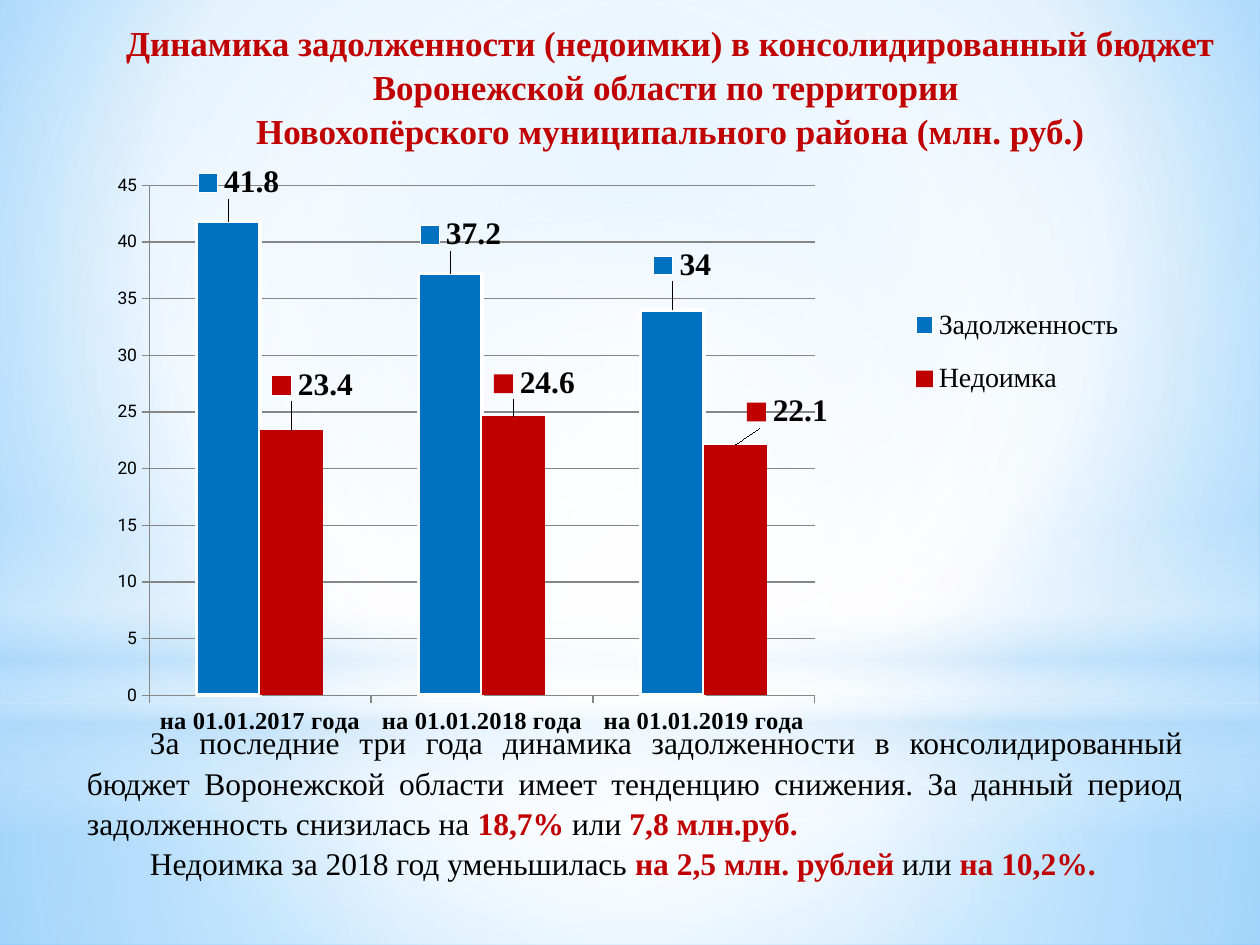
from dataclasses import dataclass

from pptx import Presentation
from pptx.chart.data import CategoryChartData
from pptx.dml.color import RGBColor
from pptx.enum.chart import XL_CHART_TYPE, XL_LABEL_POSITION, XL_LEGEND_POSITION, XL_TICK_MARK
from pptx.enum.shapes import MSO_SHAPE
from pptx.enum.text import MSO_ANCHOR, MSO_AUTO_SIZE, PP_ALIGN
from pptx.oxml import parse_xml
from pptx.oxml.ns import nsdecls, qn
from pptx.util import Inches, Pt


@dataclass(frozen=True)
class Theme:
    serif: str = "Times New Roman"
    sans: str = "Roboto"
    red: str = "C00000"
    blue: str = "0070C0"
    black: str = "000000"
    white: str = "FFFFFF"
    sky: str = "B4DCFA"
    grid: str = "868686"
    title_size: int = 20
    body_size: int = 18
    legend_size: int = 16
    category_size: int = 14
    axis_size: int = 10


theme = Theme()


def add_run(paragraph, text, *, size=theme.body_size, color=theme.black, bold=False):
    run = paragraph.add_run()
    run.text = text
    run.font.name = theme.serif
    run.font.size = Pt(size)
    run.font.bold = bold
    run.font.color.rgb = RGBColor.from_string(color)


def set_gradient(fill, element, stops, center=None):
    """Fill with (position, colour, opacity) stops: radial around center, else downwards."""
    fill.solid()
    stop_xml = "".join(
        f'<a:gs pos="{position * 1000}"><a:srgbClr val="{color}">'
        f'<a:alpha val="{opacity * 1000}"/></a:srgbClr></a:gs>'
        for position, color, opacity in stops
    )
    if center:
        sides = " ".join(f'{side}="{value * 1000}"' for side, value in zip("ltrb", center))
        direction = f'<a:path path="circle"><a:fillToRect {sides}/></a:path>'
    else:
        direction = '<a:lin ang="5400000" scaled="0"/>'
    solid = element.find(".//" + qn("a:solidFill"))
    solid.getparent().replace(solid, parse_xml(
        f'<a:gradFill {nsdecls("a")} rotWithShape="1"><a:gsLst>{stop_xml}</a:gsLst>{direction}</a:gradFill>'
    ))


presentation = Presentation()
presentation.slide_width = Inches(10)
presentation.slide_height = Inches(7.5)
slide = presentation.slides.add_slide(presentation.slide_layouts[1])
title, body = slide.placeholders

# Background glow
set_gradient(slide.background.fill, slide.element,
             [(0, "9ED5FF", 100), (60, theme.white, 100), (100, "5BB9FF", 100)], (20, 10, 20, 60))
middle = (50, 50, 50, 50)
glows = [
    (MSO_SHAPE.RECTANGLE, 5.58, 1.92, middle,
     [(0, theme.white, 91), (37, theme.white, 76), (100, theme.sky, 79)]),
    (MSO_SHAPE.RECTANGLE, 0, 5.58, middle,
     [(0, theme.white, 89), (48, theme.white, 62), (100, theme.sky, 79)]),
    (MSO_SHAPE.RECTANGLE, 4.12, 2.5, None,
     [(0, theme.white, 0), (29, theme.white, 30), (45, theme.sky, 40),
      (55, theme.white, 26), (65, theme.sky, 60), (100, theme.white, 0)]),
    (MSO_SHAPE.OVAL, 1.75, 5.58, middle, [(0, theme.white, 100), (56, theme.white, 0)]),
]
for kind, top, height, center, stops in glows:
    shape = slide.shapes.add_shape(kind, 0, Inches(top), Inches(10), Inches(height))
    shape.shadow.inherit = False
    shape.line.fill.background()
    set_gradient(shape.fill, shape.element, stops, center)

# Chart
chart_data = CategoryChartData()
chart_data.categories = [f"на 01.01.{year} года" for year in (2017, 2018, 2019)]
chart_data.add_series("Задолженность", (41.8, 37.2, 34))
chart_data.add_series("Недоимка", (23.4, 24.6, 22.1))
chart_frame = slide.shapes.add_chart(
    XL_CHART_TYPE.COLUMN_CLUSTERED, Inches(0.83), Inches(1.31), Inches(8.23), Inches(4.72), chart_data)
chart = chart_frame.chart
chart.has_title = False
chart.font.name = theme.sans
chart.font.size = Pt(theme.axis_size)
chart.font.color.rgb = RGBColor.from_string(theme.black)

plot = chart.plots[0]
plot.gap_width = 150
plot.overlap = 0
plot.vary_by_categories = False

for axis in (chart.category_axis, chart.value_axis):
    axis.major_tick_mark = XL_TICK_MARK.OUTSIDE
    axis.format.line.color.rgb = RGBColor.from_string(theme.grid)
chart.category_axis.tick_labels.font.name = theme.serif
chart.category_axis.tick_labels.font.size = Pt(theme.category_size)
chart.category_axis.tick_labels.font.bold = True
chart.value_axis.minimum_scale = 0
chart.value_axis.maximum_scale = 45
chart.value_axis.major_unit = 5
chart.value_axis.major_gridlines.format.line.color.rgb = RGBColor.from_string(theme.grid)

chart.has_legend = True
legend = chart.legend
legend.position = XL_LEGEND_POSITION.RIGHT
legend.include_in_layout = False
legend.font.name = theme.serif
legend.font.size = Pt(theme.legend_size)

# Manual layouts: parent element, index of the layout in it, values
layouts = [
    (chart.element.find(".//" + qn("c:plotArea")), 0,
     dict(layoutTarget="inner", xMode="edge", yMode="edge", x=0.043, y=0.028, w=0.642, h=0.863)),
    (chart.element.find(".//" + qn("c:legend")), 1,
     dict(xMode="edge", yMode="edge", x=0.77, y=0.2, w=0.22, h=0.22)),
]
label_offsets = [
    [(0.01, -0.03), (0.01, -0.03), (0.01, -0.04)],
    [(0.02, -0.04), (0.02, -0.02), (0.05, -0.02)],
]
for series, color, offsets in zip(plot.series, (theme.blue, theme.red), label_offsets):
    series.format.fill.solid()
    series.format.fill.fore_color.rgb = RGBColor.from_string(color)
    for index, (x, y) in enumerate(offsets):
        label = series.points[index].data_label
        label.font.name = theme.serif
        label.font.size = Pt(theme.body_size)
        label.font.bold = True
        label.position = XL_LABEL_POSITION.OUTSIDE_END
    for label_element, (x, y) in zip(series.data_labels._element.findall(qn("c:dLbl")), offsets):
        label_element.find(qn("c:showLegendKey")).set("val", "1")
        layouts.append((label_element, 1, dict(x=x, y=y)))
debt = plot.series[0]
debt.format.line.color.rgb = RGBColor.from_string(theme.white)
debt.format.line.width = Pt(2)

for parent, index, values in layouts:
    for old in parent.findall(qn("c:layout")):
        parent.remove(old)
    settings = "".join(f'<c:{name} val="{value}"/>' for name, value in values.items())
    parent.insert(index, parse_xml(
        f'<c:layout {nsdecls("c")}><c:manualLayout>{settings}</c:manualLayout></c:layout>'))

# Title and commentary, brought in front of the glow
paragraphs = [
    (title, PP_ALIGN.CENTER, 1.04, [
        ("Динамика задолженности (недоимки) в консолидированный бюджет "
         "Воронежской области по территории ", dict(size=theme.title_size, color=theme.red, bold=True))]),
    (title, PP_ALIGN.CENTER, 1.04, [
        ("Новохопёрского муниципального района (млн. руб.)",
         dict(size=theme.title_size, color=theme.red, bold=True))]),
    (body, PP_ALIGN.JUSTIFY, 1.06, [
        ("\t", dict(size=theme.title_size)),
        ("За последние три года динамика задолженности в консолидированный бюджет Воронежской области "
         "имеет тенденцию снижения. За данный период задолженность снизилась на ", {}),
        ("18,7%", dict(color=theme.red, bold=True)),
        (" или ", {}),
        ("7,8 млн.руб. ", dict(color=theme.red, bold=True))]),
    (body, PP_ALIGN.JUSTIFY, 1.06, [
        ("\tНедоимка за 2018 год уменьшилась ", {}),
        ("на 2,5 млн. рублей ", dict(color=theme.red, bold=True)),
        ("или ", {}),
        ("на 10,2%. ", dict(color=theme.red, bold=True))]),
]
boxes = [(title, (0.83, 0.13, 8.98, 1.1), MSO_ANCHOR.MIDDLE), (body, (0.59, 5.64, 8.9, 1.49), MSO_ANCHOR.TOP)]
for placeholder, box, anchor in boxes:
    placeholder.left, placeholder.top, placeholder.width, placeholder.height = map(Inches, box)
    frame = placeholder.text_frame
    frame.word_wrap = True
    frame.auto_size = MSO_AUTO_SIZE.NONE
    frame.vertical_anchor = anchor
for placeholder, alignment, spacing, runs in paragraphs:
    frame = placeholder.text_frame
    paragraph = frame.add_paragraph() if frame.text else frame.paragraphs[0]
    properties = paragraph._p.get_or_add_pPr()
    properties.set("marL", "0")
    properties.set("indent", "0")
    properties.append(parse_xml(f'<a:buNone {nsdecls("a")}/>'))
    paragraph.alignment = alignment
    paragraph.line_spacing = spacing
    paragraph.space_before = paragraph.space_after = Pt(0)
    for text, style in runs:
        add_run(paragraph, text, **style)
for shape in (title, chart_frame, body):
    slide.shapes.element.append(shape.element)

presentation.save("out.pptx")
